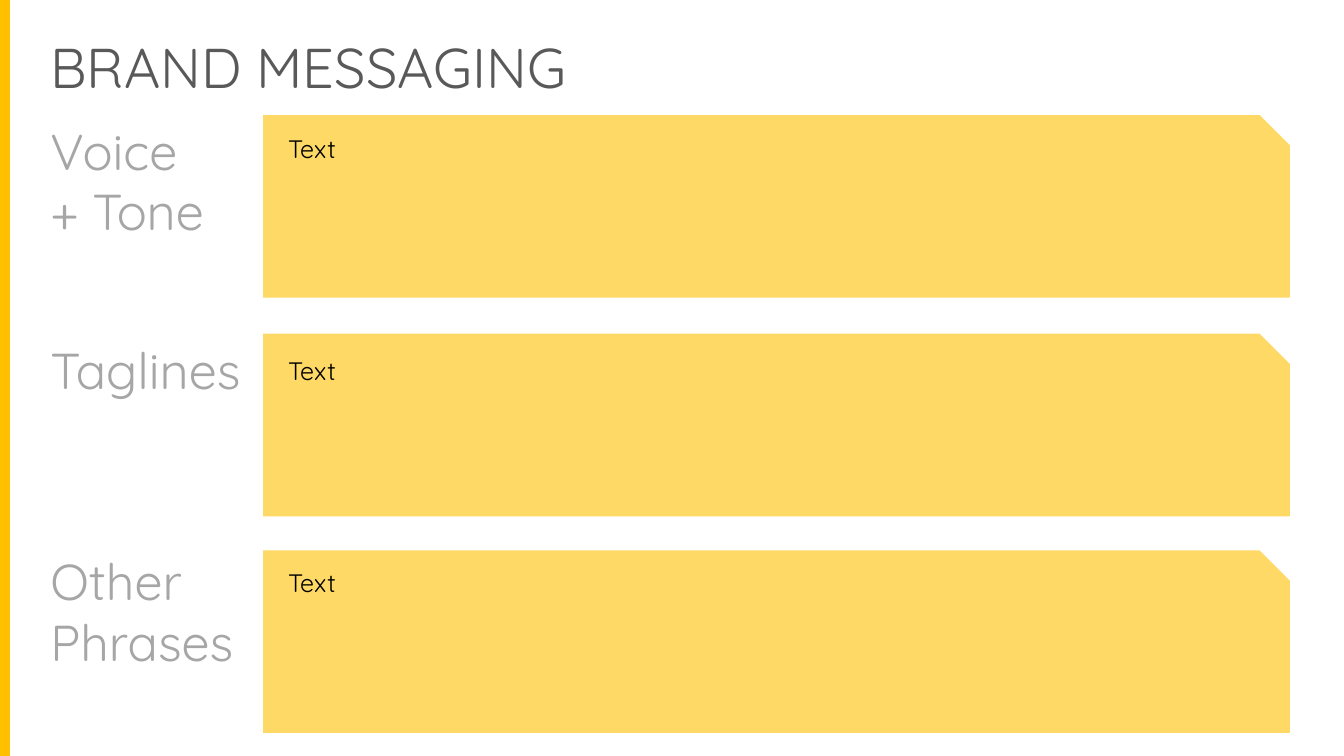
from dataclasses import dataclass

import pptx
import pptx.dml.color
import pptx.enum.shapes
import pptx.enum.text
import pptx.slide
import pptx.util

Cm = pptx.util.Cm
RGBColor = pptx.dml.color.RGBColor
Shapes = pptx.enum.shapes.MSO_SHAPE

FONT = "Quicksand"
WHITE = RGBColor(0xFF, 0xFF, 0xFF)
BLACK = RGBColor(0x00, 0x00, 0x00)
DARK_GRAY = RGBColor(0x59, 0x59, 0x59)
LIGHT_GRAY = RGBColor(0xA6, 0xA6, 0xA6)
PALE_YELLOW = RGBColor(0xFF, 0xD9, 0x66)
GOLD = RGBColor(0xFF, 0xC0, 0x00)

SLIDE_WIDTH = 33.87
SLIDE_HEIGHT = 19.05
MARGIN = 1.02


@dataclass(frozen=True)
class Section:
    label: str
    panel_top: float
    label_top: float
    label_height: float
    body_top: float


SECTIONS = (
    Section("Voice\n+ Tone", 2.9, 2.9, 3.33, 3.23),
    Section("Taglines", 8.41, 8.41, 1.8, 8.84),
    Section("Other Phrases", 13.87, 13.74, 3.33, 14.17),
)


def add_block(page: pptx.slide.Slide, kind: Shapes, left: float, top: float,
              width: float, height: float, color: RGBColor) -> None:
    block = page.shapes.add_shape(kind, Cm(left), Cm(top), Cm(width), Cm(height))
    block.shadow.inherit = False
    block.fill.solid()
    block.fill.fore_color.rgb = color
    block.line.fill.background()


def add_text(page: pptx.slide.Slide, text: str, *, left: float, top: float,
             width: float, height: float, size: float, color: RGBColor,
             wrap: bool = True) -> None:
    box = page.shapes.add_textbox(Cm(left), Cm(top), Cm(width), Cm(height))
    frame = box.text_frame
    frame.word_wrap = wrap
    frame.auto_size = pptx.enum.text.MSO_AUTO_SIZE.SHAPE_TO_FIT_TEXT
    frame.text = text
    for para in frame.paragraphs:
        for span in para.runs:
            span.font.name = FONT
            span.font.size = pptx.util.Pt(size)
            span.font.color.rgb = color


def add_section(page: pptx.slide.Slide, section: Section) -> None:
    add_block(page, Shapes.SNIP_1_RECTANGLE, 6.63, section.panel_top, 25.88, 4.6,
              PALE_YELLOW)
    add_text(page, section.label, left=MARGIN, top=section.label_top, width=6.5,
             height=section.label_height, size=36, color=LIGHT_GRAY)
    add_text(page, "Text", left=7.01, top=section.body_top, width=17.22,
             height=1.02, size=18, color=BLACK)


def main() -> None:
    deck = pptx.Presentation()
    deck.slide_width = Cm(SLIDE_WIDTH)
    deck.slide_height = Cm(SLIDE_HEIGHT)
    page = deck.slides.add_slide(deck.slide_layouts[6])
    page.background.fill.solid()
    page.background.fill.fore_color.rgb = WHITE

    add_block(page, Shapes.RECTANGLE, 0, 0, 0.25, SLIDE_HEIGHT, GOLD)
    add_text(page, "BRAND MESSAGING", left=MARGIN, top=0.69, width=14.17,
             height=1.96, size=40, color=DARK_GRAY, wrap=False)
    for section in SECTIONS:
        add_section(page, section)

    deck.save("out.pptx")


if __name__ == "__main__":
    main()
